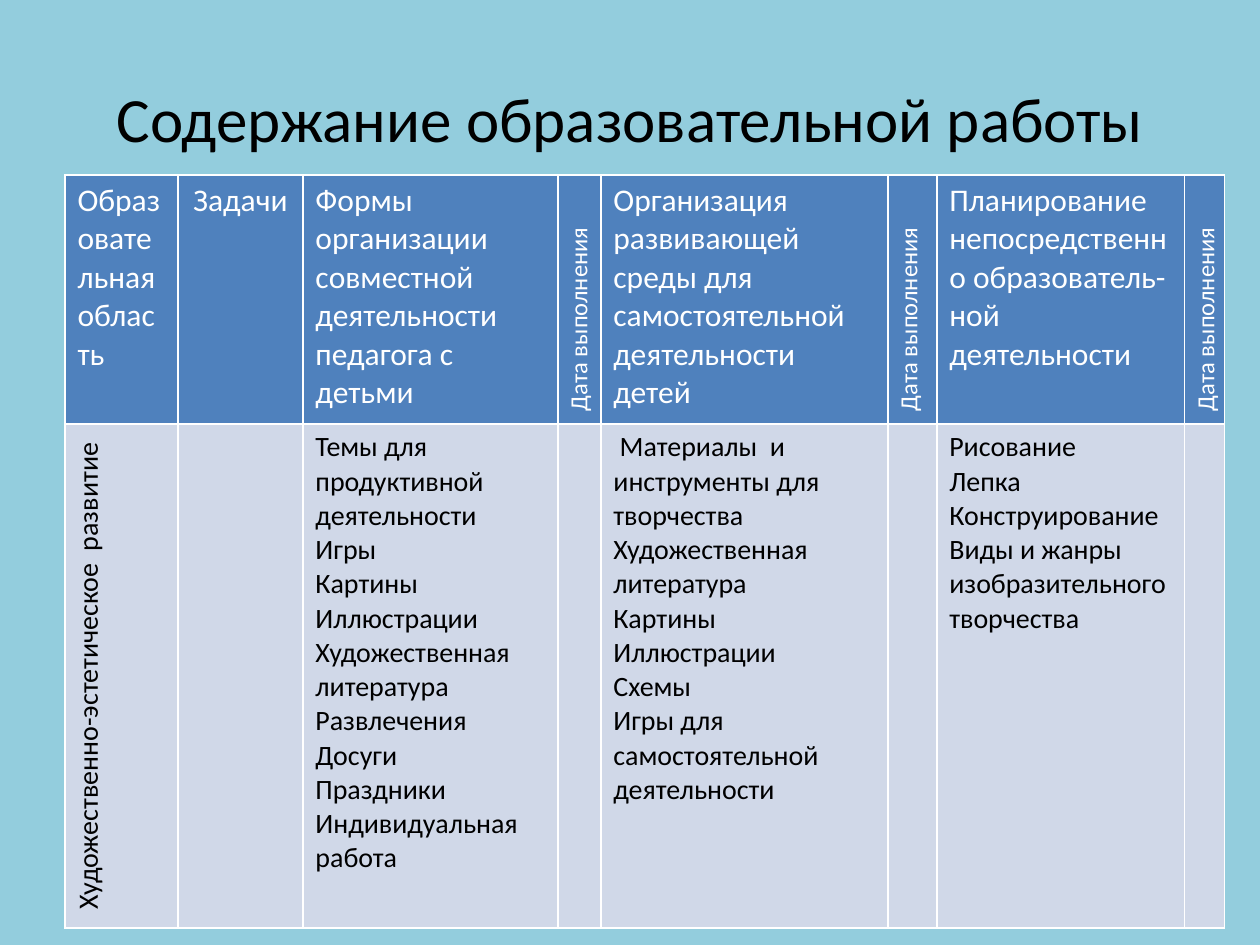
from lxml.etree import SubElement
from pptx import Presentation
from pptx.dml.color import RGBColor
from pptx.enum.text import MSO_ANCHOR, PP_ALIGN
from pptx.oxml.ns import qn
from pptx.util import Emu, Pt

PX = 914400 / 126
COLORS = {
    "background": "93CDDD",
    "header": "4F81BD",
    "body": "D0D8E8",
    "light": "FFFFFF",
    "dark": "000000",
}
COLUMNS = [113, 125, 255, 43, 287, 49, 248, 40]
ROWS = [249, 504]

DATE = "Дата выполнения"
HEADINGS = [
    "Образовательная область",
    "Задачи ",
    "Формы организации совместной деятельности педагога с детьми",
    DATE,
    "Организация развивающей среды для самостоятельной деятельности детей",
    DATE,
    "Планирование непосредственно образователь-ной деятельности",
    DATE,
]
AREA = "Художественно-эстетическое  развитие"
JOINT_WORK = [
    "Темы для продуктивной деятельности",
    "Игры",
    "Картины",
    "Иллюстрации",
    "Художественная литература",
    "Развлечения",
    "Досуги",
    "Праздники",
    "Индивидуальная работа",
]
ENVIRONMENT = [
    " Материалы  и инструменты для творчества",
    "Художественная литература",
    "Картины",
    "Иллюстрации",
    "Схемы",
    "Игры для самостоятельной деятельности",
]
LESSONS = [
    "Рисование",
    "Лепка",
    "Конструирование",
    "Виды и жанры изобразительного творчества",
]
CONTENT = [[AREA], [], JOINT_WORK, [], ENVIRONMENT, [], LESSONS, []]


def px(length):
    return Emu(round(length * PX))


def rgb(name):
    return RGBColor.from_string(COLORS[name])


class SlideBuilder:
    font = "Calibri"

    def __init__(self, slide):
        self.slide = slide

    def background(self, color):
        fill = self.slide.background.fill
        fill.solid()
        fill.fore_color.rgb = rgb(color)

    def add_lines(self, frame, lines, size, color, align=PP_ALIGN.LEFT):
        for index, line in enumerate(lines):
            paragraph = frame.add_paragraph() if index else frame.paragraphs[0]
            paragraph.alignment = align
            run = paragraph.add_run()
            run.text = line
            run.font.name = self.font
            run.font.size = Pt(size)
            run.font.color.rgb = rgb(color)

    def title(self, words, left, top, width, height):
        frame = self.slide.shapes.add_textbox(
            px(left), px(top), px(width), px(height)).text_frame
        frame.word_wrap = True
        frame.vertical_anchor = MSO_ANCHOR.MIDDLE
        self.add_lines(frame, [words], 36, "dark", PP_ALIGN.CENTER)

    def table(self, left, top, columns, rows):
        grid = self.slide.shapes.add_table(
            len(rows), len(columns), px(left), px(top),
            px(sum(columns)), px(sum(rows))).table
        for column, width in zip(grid.columns, columns):
            column.width = px(width)
        for row, height in zip(grid.rows, rows):
            row.height = px(height)
        return grid

    def cell(self, cell, lines, size, fill, color, align, upward):
        properties = cell._tc.get_or_add_tcPr()
        if upward:
            properties.set("vert", "vert270")
        for side in ("lnL", "lnR", "lnT", "lnB"):
            border = SubElement(properties, qn(f"a:{side}"), w=str(Pt(1)))
            paint = SubElement(border, qn("a:solidFill"))
            SubElement(paint, qn("a:srgbClr"), val=COLORS["light"])
        cell.fill.solid()
        cell.fill.fore_color.rgb = rgb(fill)
        self.add_lines(cell.text_frame, lines, size, color, align)


def main():
    deck = Presentation()
    deck.slide_width, deck.slide_height = px(1260), px(945)
    builder = SlideBuilder(deck.slides.add_slide(deck.slide_layouts[6]))
    builder.background("background")
    builder.title("Содержание образовательной работы", 63, 38, 1134, 158)

    plan = builder.table(65, 175, COLUMNS, ROWS)
    for index, (heading, items) in enumerate(zip(HEADINGS, CONTENT)):
        is_date = heading == DATE
        heading_align = PP_ALIGN.CENTER if index == 1 else PP_ALIGN.LEFT
        builder.cell(plan.cell(0, index), [heading], 14 if is_date else 18,
                     "header", "light", heading_align, is_date)
        is_area = index == 0
        items_align = PP_ALIGN.CENTER if is_area else PP_ALIGN.LEFT
        builder.cell(plan.cell(1, index), items, 16,
                     "body", "dark", items_align, is_area)

    deck.save("out.pptx")


if __name__ == "__main__":
    main()
